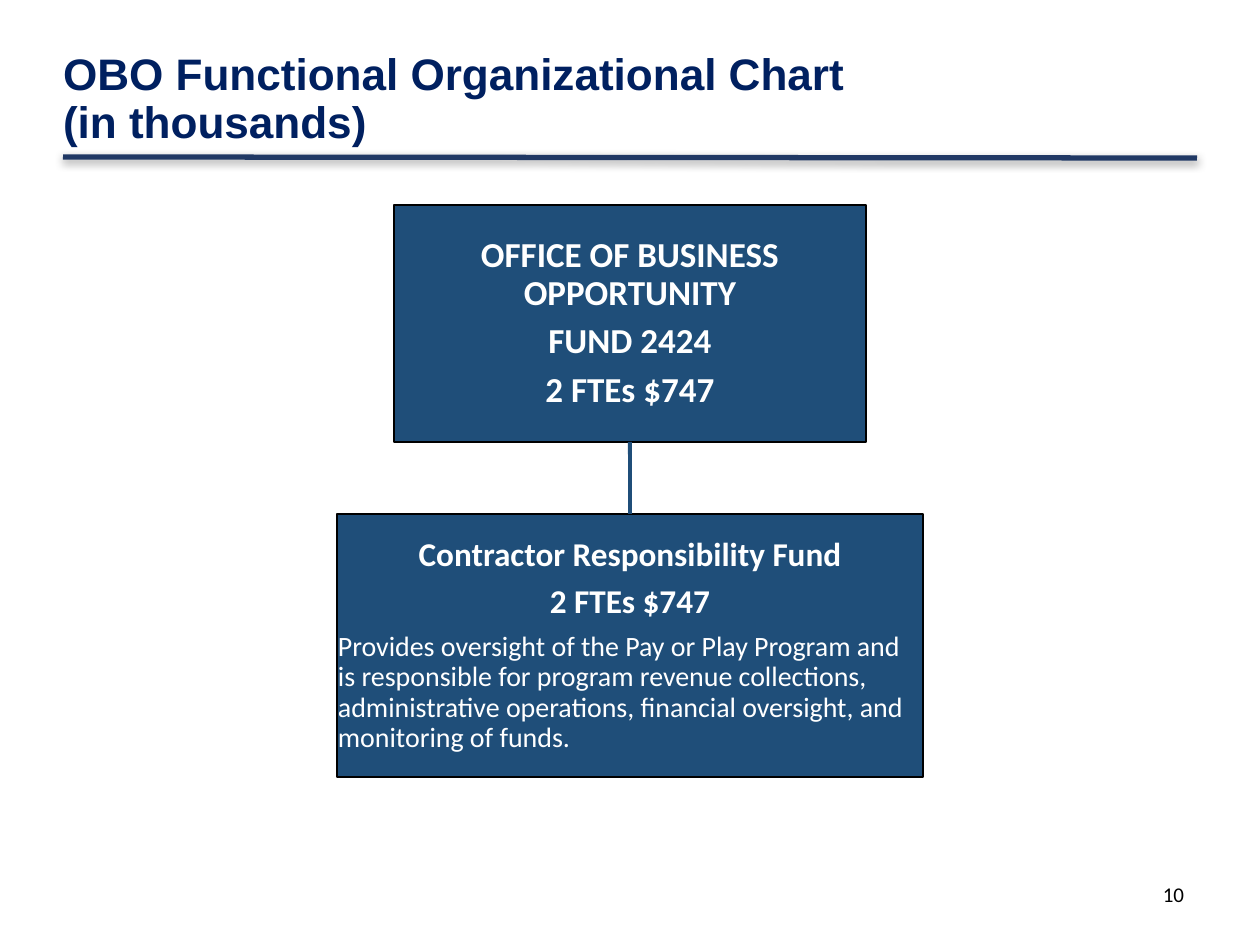
from lxml import etree
from pptx import Presentation
from pptx.dml.color import RGBColor
from pptx.enum.shapes import MSO_CONNECTOR, MSO_SHAPE
from pptx.enum.text import MSO_ANCHOR, PP_ALIGN
from pptx.oxml.ns import qn
from pptx.util import Pt

STRAIGHT = MSO_CONNECTOR.STRAIGHT
RECTANGLE = MSO_SHAPE.RECTANGLE
TOP, MIDDLE = MSO_ANCHOR.TOP, MSO_ANCHOR.MIDDLE
LEFT, CENTER, RIGHT = PP_ALIGN.LEFT, PP_ALIGN.CENTER, PP_ALIGN.RIGHT

SCALE = 914400 / 126
PAGE_WIDTH, PAGE_HEIGHT = 1260, 945
MARGIN = 63
NAVY, RULE_BLUE, BOX_BLUE = "002060", "203864", "1F4E79"
WHITE, BLACK = "FFFFFF", "000000"

TITLE = "OBO Functional Organizational Chart\v(in thousands)"
PAGE_NUMBER = "10"
BOXES = [
    {"top": 205, "width": 472, "height": 237, "paras": [
        ("OFFICE OF BUSINESS OPPORTUNITY", 20, True, CENTER, 6),
        ("FUND 2424", 20, True, CENTER, 6),
        ("2 FTEs $747", 20, True, CENTER, 6),
    ]},
    {"top": 514, "width": 586, "height": 263, "paras": [
        ("Contractor Responsibility Fund", 19, True, CENTER, 6.65),
        ("2 FTEs $747", 19, True, CENTER, 6.65),
        ("Provides oversight of the Pay or Play Program and is responsible for "
         "program revenue collections, administrative operations, financial "
         "oversight, and monitoring of funds.", 16, False, LEFT, 5.6),
    ]},
]


def px(value):
    return round(value * SCALE)


def color(value):
    return RGBColor.from_string(value)


def set_frame(frame, anchor, horizontal, vertical):
    frame.word_wrap = True
    frame.vertical_anchor = anchor
    frame.margin_left = frame.margin_right = px(horizontal)
    frame.margin_top = frame.margin_bottom = px(vertical)


def write(para, text, font, size, bold, ink, align, spacing=1, after=0):
    para.text = text
    para.alignment = align
    para.line_spacing = spacing
    para.space_after = Pt(after)
    for span in para.runs:
        span.font.name = font
        span.font.size = Pt(size)
        span.font.bold = bold
        span.font.color.rgb = color(ink)


def add_text(slide, left, top, width, height):
    return slide.shapes.add_textbox(px(left), px(top), px(width), px(height)).text_frame


def add_line(slide, start, end, ink, weight):
    line = slide.shapes.add_connector(STRAIGHT, *map(px, start + end))
    line.line.color.rgb = color(ink)
    line.line.width = Pt(weight)
    effects = etree.SubElement(line._element.spPr, qn("a:effectLst"))
    return line, effects


def add_box(slide, item):
    left = (PAGE_WIDTH - item["width"]) / 2
    box = slide.shapes.add_shape(
        RECTANGLE, px(left), px(item["top"]), px(item["width"]), px(item["height"]))
    box.shadow.inherit = False
    box.fill.solid()
    box.fill.fore_color.rgb = color(BOX_BLUE)
    box.line.color.rgb = color(BLACK)
    box.line.width = Pt(1)
    frame = box.text_frame
    set_frame(frame, MIDDLE, 1, 1)
    for index, (text, size, bold, align, after) in enumerate(item["paras"]):
        para = frame.add_paragraph() if index else frame.paragraphs[0]
        write(para, text, "Calibri", size, bold, WHITE, align, 0.9, after)
    return box


def main():
    deck = Presentation()
    deck.slide_width, deck.slide_height = px(PAGE_WIDTH), px(PAGE_HEIGHT)
    slide = deck.slides.add_slide(deck.slide_layouts[6])

    _, effects = add_line(slide, (MARGIN, 157), (PAGE_WIDTH - MARGIN, 158), RULE_BLUE, 3)
    shadow = etree.SubElement(
        effects, qn("a:outerShdw"), blurRad=str(Pt(5)), dist=str(Pt(1.6)),
        dir="5400000", rotWithShape="0")
    shade = etree.SubElement(shadow, qn("a:srgbClr"), val=BLACK)
    etree.SubElement(shade, qn("a:alpha"), val="38000")

    title = add_text(slide, MARGIN, 42, 864, 116)
    set_frame(title, MIDDLE, 0, 0)
    write(title.paragraphs[0], TITLE, "Arial", 25.2, True, NAVY, LEFT, 0.9)

    office, fund = [add_box(slide, item) for item in BOXES]
    middle = PAGE_WIDTH / 2
    upper = BOXES[0]["top"] + BOXES[0]["height"]
    link, _ = add_line(slide, (middle, upper), (middle, BOXES[1]["top"]), BOX_BLUE, 2.25)
    link.begin_connect(office, 2)
    link.end_connect(fund, 0)

    number = add_text(slide, 903, 876, 294, 50)
    set_frame(number, TOP, 13, 6)
    write(number.paragraphs[0], PAGE_NUMBER, "Calibri", 12, False, BLACK, RIGHT)

    deck.save("out.pptx")


if __name__ == "__main__":
    main()
